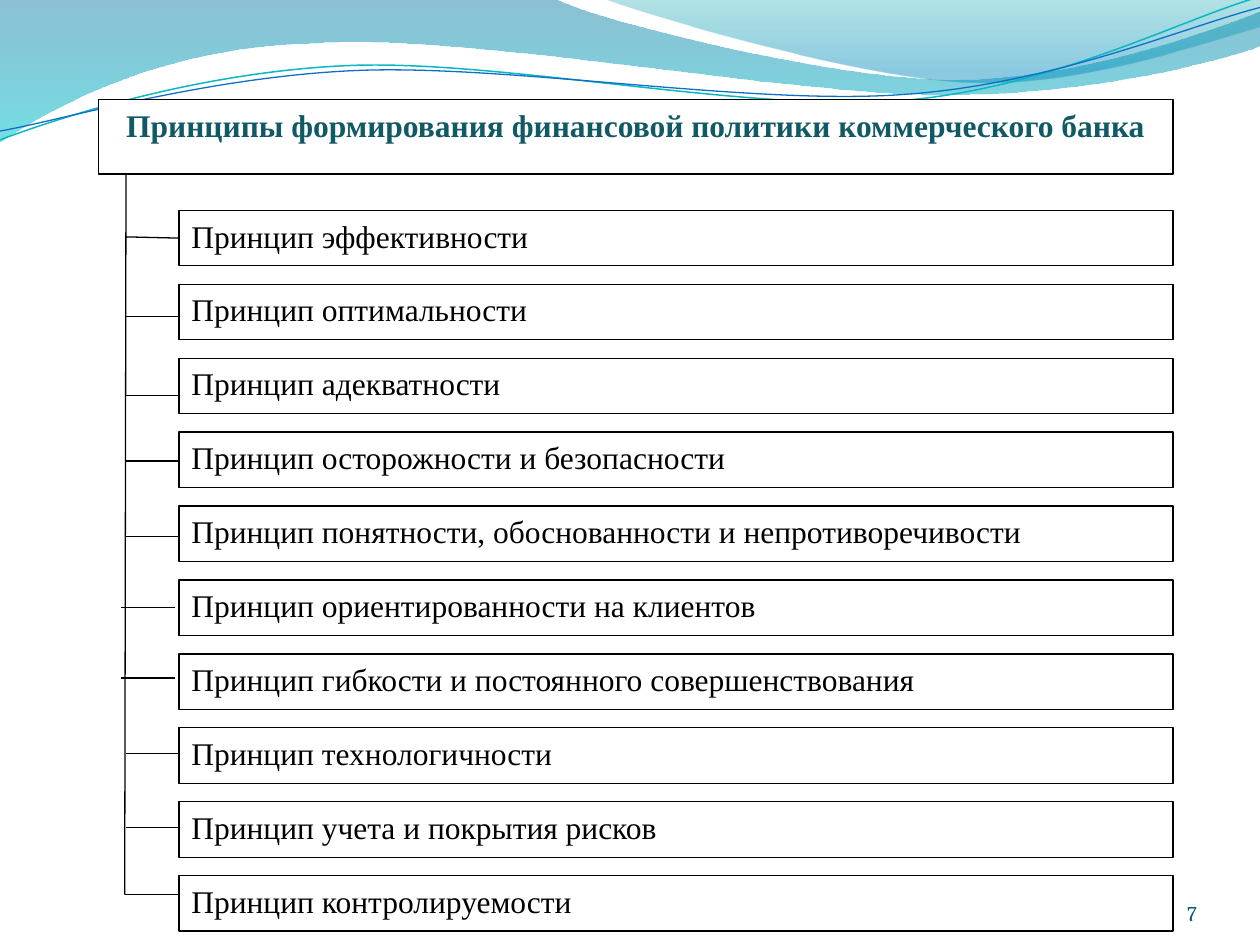
from math import cos, radians, sin

from lxml import etree
from pptx import Presentation
from pptx.dml.color import RGBColor
from pptx.enum.shapes import MSO_CONNECTOR, MSO_SHAPE
from pptx.enum.text import MSO_ANCHOR as ANCHOR, MSO_AUTO_SIZE as AUTO, PP_ALIGN as ALIGN
from pptx.oxml.ns import qn
from pptx.util import Inches, Pt

SERIF = "Times New Roman"
TILT = 357.3  # rotation of the thin waves, degrees

# Outlines: a start point, then lines (x, y) and Bezier curves (six numbers)
FILLED_WAVES = [
    dict(start=(0, 0), stops=[(0, "0074A1", 45), (1, "00C6CF", 55)],
         parts=[(4.4, -0.01), (4.76, 0.17, 6.64, 0.63, 7.58, 0.63),
                (8.53, 0.63, 9.58, 0.26, 10, 0.09), (10.01, 0.36),
                (9.83, 0.44, 8.7, 0.76, 7.46, 0.75), (6.22, 0.75, 3.82, 0.28, 2.57, 0.34),
                (1.29, 0.36, 0.46, 0.83, -0.01, 1.13), (0, 0)]),
    dict(start=(4.79, -0.01), stops=[(0, "00A1A9", 30), (0.8, "008BBF", 45)],
         parts=[(5.09, 0.11, 6.82, 0.62, 7.69, 0.65), (8.56, 0.69, 9.61, 0.32, 10, 0.21),
                (10, 0), (4.79, -0.01)]),
]
THIN_WAVES = [
    dict(start=(0, 1.11), center=(4.99, 0.58), line=("0AB8BF", 0.85),
         parts=[(0.48, 0.93, 1.58, 0.57, 2.77, 0.52), (3.95, 0.47, 5.93, 0.89, 7.13, 0.8),
                (8.33, 0.71, 9.38, 0.15, 9.98, -0.02)]),
    dict(start=(0, 1.04), center=(5, 0.59), line=("0F6FC6", 0.75),
         parts=[(0.47, 0.96, 1.64, 0.61, 2.83, 0.56), (4.03, 0.51, 5.97, 0.84, 7.17, 0.75),
                (8.36, 0.67, 9.41, 0.21, 10, 0.06)]),
]

# Each principle with its branch: start x, start y, end x, end y
PRINCIPLES = [
    ("Принцип эффективности", (1, 1.88, 1.42, 1.89)),
    ("Принцип оптимальности", (1, 2.51, 1.42, 2.51)),
    ("Принцип адекватности", (0.99, 3.14, 1.41, 3.14)),
    ("Принцип осторожности и безопасности", (1, 3.66, 1.42, 3.66)),
    ("Принцип понятности, обоснованности и непротиворечивости", (1, 4.26, 1.42, 4.26)),
    ("Принцип ориентированности на клиентов", (0.96, 4.82, 1.39, 4.82)),
    ("Принцип гибкости и постоянного совершенствования", (0.96, 5.38, 1.39, 5.38)),
    ("Принцип технологичности", (1, 5.98, 1.41, 5.98)),
    ("Принцип учета и покрытия рисков", (1, 6.57, 1.42, 6.57)),
    ("Принцип контролируемости", (0.99, 7.1, 1.42, 7.1)),
]


def color(value):
    return RGBColor.from_string(value)


def set_line(line, value="000000", width=0.75):
    line.color.rgb = color(value)
    line.width = Pt(width)


def place(sp, box):
    for name, value in zip(("left", "top", "width", "height"), box):
        setattr(sp, name, Inches(value))


def write(sp, text, align=ALIGN.LEFT, anchor=ANCHOR.TOP, ink="000000", **font):
    tf = sp.text_frame
    for name, value in dict(word_wrap=True, auto_size=AUTO.NONE, vertical_anchor=anchor).items():
        setattr(tf, name, value)
    p = tf.paragraphs[0]
    p.alignment = align
    r = p.add_run()
    r.text = text
    for name, value in {"name": SERIF, "size": Pt(18), **font}.items():
        setattr(r.font, name, value)
    r.font.color.rgb = color(ink)


def frame(sp):
    """White box with a thin black border."""
    sp.fill.solid()
    sp.fill.fore_color.rgb = color("FFFFFF")
    set_line(sp.line)


def connect(s, x1, y1, x2, y2):
    line = s.shapes.add_connector(MSO_CONNECTOR.STRAIGHT, *map(Inches, (x1, y1, x2, y2)))
    set_line(line.line)
    etree.SubElement(line.element.spPr, qn("a:effectLst"))


def level(point, center):
    """Turn a point back by the tilt, so that the shape's rotation restores it."""
    a = radians(-TILT)
    dx, dy = point[0] - center[0], point[1] - center[1]
    return center[0] + dx * cos(a) - dy * sin(a), center[1] + dx * sin(a) + dy * cos(a)


def add_outline(s, start, parts, closed, center=None):
    points = [start] + [part[i:i + 2] for part in parts for i in range(0, len(part), 2)]
    if center:
        points = [level(point, center) for point in points]
    first, *rest = [(Inches(x), Inches(y)) for x, y in points]
    builder = s.shapes.build_freeform(*first)
    builder.add_line_segments(rest, close=closed)
    sp = builder.convert_to_shape()
    sp.shadow.inherit = False
    # Join each three points of a curve into one Bezier segment
    lines = iter(list(sp.element.spPr.iter(qn("a:lnTo"))))
    for part in parts:
        group = [next(lines) for _ in range(len(part) // 2)]
        if len(group) == 3:
            curve = etree.Element(qn("a:cubicBezTo"))
            group[0].addprevious(curve)
            for node in group:
                curve.append(node[0])
                node.getparent().remove(node)
    return sp


def add_filled_wave(s, start, parts, stops):
    sp = add_outline(s, start, parts, True)
    sp.line.fill.background()
    sp.fill.gradient()
    sp.fill.gradient_angle = 270  # downwards
    for stop, (position, value, _) in zip(sp.fill.gradient_stops, stops):
        stop.position = position
        stop.color.rgb = color(value)
    # Opacity of each stop
    for clr, (_, _, opacity) in zip(sp.element.spPr.iter(qn("a:srgbClr")), stops):
        etree.SubElement(clr, qn("a:alpha"), val=str(opacity * 1000))


def add_thin_wave(s, start, parts, center, line):
    sp = add_outline(s, start, parts, False, center)
    sp.rotation = TILT
    sp.fill.background()
    set_line(sp.line, *line)


def add_title(s, box):
    sp = s.shapes.title
    sp.element.getparent().append(sp.element)  # in front of the waves
    place(sp, box)
    frame(sp)
    write(sp, "Принципы формирования финансовой политики коммерческого банка",
          ALIGN.CENTER, ink="115964", bold=True)


def add_principles(s, box):
    left, top, width, height = box
    row = 0.44
    pitch = (height - row) / (len(PRINCIPLES) - 1)
    connect(s, 1, 1.38, 0.99, 7.1)  # trunk
    for i, (text, _) in enumerate(PRINCIPLES):
        sp = s.shapes.add_shape(MSO_SHAPE.RECTANGLE, 0, 0, 0, 0)
        place(sp, (left, top + i * pitch, width, row))
        sp.shadow.inherit = False
        frame(sp)
        write(sp, text)
    for _, branch in PRINCIPLES:
        connect(s, *branch)


def add_page_number(s, box):
    sp = s.shapes.add_textbox(*map(Inches, box))
    for side in ("left", "top", "right", "bottom"):
        setattr(sp.text_frame, f"margin_{side}", 0)
    write(sp, "7", ALIGN.RIGHT, ANCHOR.BOTTOM, "045D75", name="Cambria", size=Pt(12))


def main():
    prs = Presentation()
    prs.slide_width, prs.slide_height = Inches(10), Inches(7.5)
    s = prs.slides.add_slide(prs.slide_layouts[5])
    for wave in FILLED_WAVES:
        add_filled_wave(s, **wave)
    for wave in THIN_WAVES:
        add_thin_wave(s, **wave)
    add_page_number(s, (8.67, 6.95, 0.83, 0.4))
    add_title(s, (0.78, 0.79, 8.53, 0.59))
    add_principles(s, (1.42, 1.67, 7.89, 5.72))
    prs.save("out.pptx")


if __name__ == "__main__":
    main()
